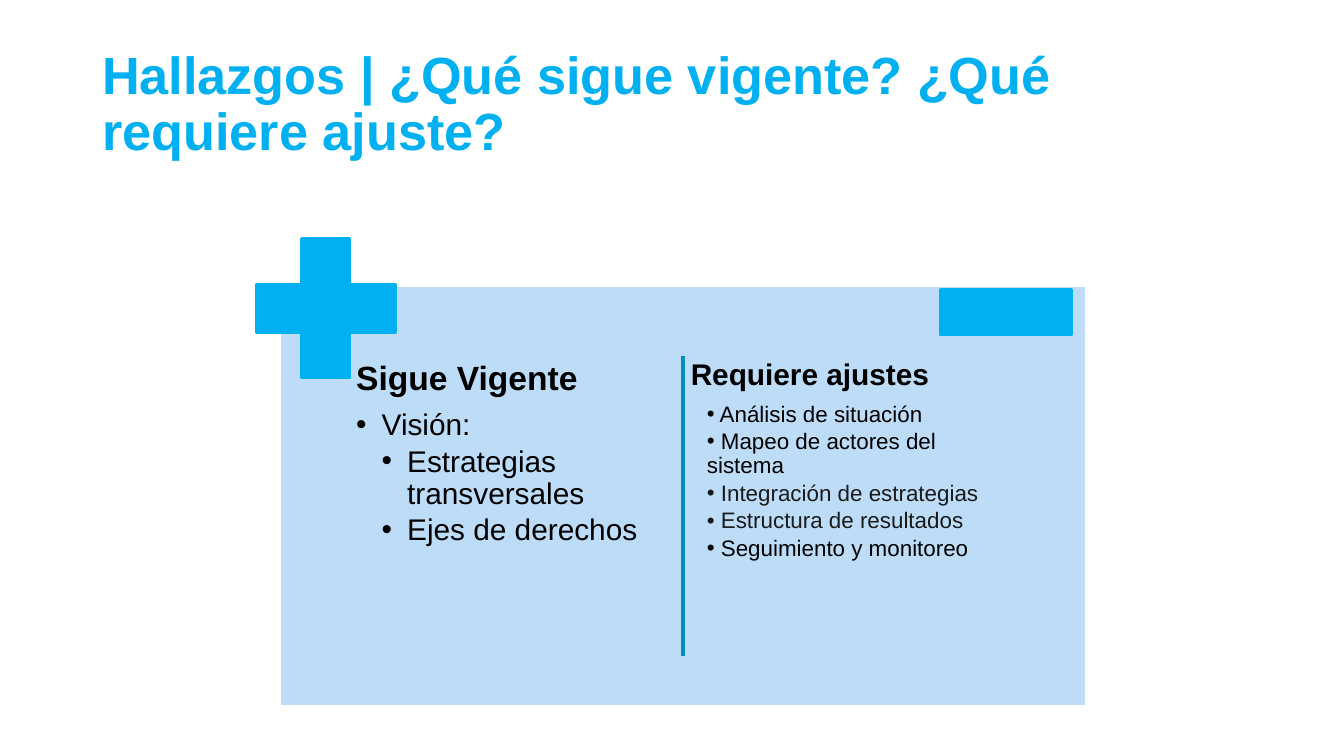
from lxml.etree import SubElement
from pptx import Presentation
from pptx.dml.color import RGBColor
from pptx.enum.shapes import MSO_CONNECTOR as Connector, MSO_SHAPE as Shape
from pptx.enum.text import MSO_ANCHOR as Anchor
from pptx.oxml.ns import qn
from pptx.util import Inches, Pt

WHITE = RGBColor(0xFF, 0xFF, 0xFF)
PALE_BLUE = RGBColor(0xBD, 0xDC, 0xF8)
CYAN = RGBColor(0x00, 0xB0, 0xF0)
DEEP_BLUE = RGBColor(0x00, 0x8D, 0xC0)
BLACK = RGBColor(0x00, 0x00, 0x00)
CHARCOAL = RGBColor(0x1A, 0x1A, 0x1A)

FONT = "Arial"
COLUMNS = 100
ROWS = COLUMNS * 9 / 16
PANEL = (20.8, 21.2, 60.1, 31.4)
BODY_TOP, BODY_WIDTH, BODY_HEIGHT = 26.5, 24.5, 23.3

KEPT = [("Visión:", 1), ("Estrategias transversales", 2), ("Ejes de derechos", 2)]
ADJUSTED = [
    (" Análisis de situación", BLACK),
    (" Mapeo de actores del sistema", BLACK),
    (" Integración de estrategias", CHARCOAL),
    (" Estructura de resultados", CHARCOAL),
    (" Seguimiento y monitoreo", BLACK),
]


def grid(*cells):
    return [Inches(cell / 10) for cell in cells]


def add_block(slide, kind, area, fill, border):
    block = slide.shapes.add_shape(kind, *grid(*area))
    block.shadow.inherit = False
    block.fill.solid()
    block.fill.fore_color.rgb = fill
    block.line.color.rgb = border
    block.line.width = Pt(2)
    return block


def add_divider(slide, x, top, bottom):
    divider = slide.shapes.add_connector(Connector.STRAIGHT, *grid(x, top, x, bottom))
    divider.line.color.rgb = DEEP_BLUE
    divider.line.width = Pt(2)
    SubElement(divider._element.spPr, qn("a:effectLst"))


def add_frame(slide, area, side_inset, end_inset, anchor=Anchor.TOP):
    frame = slide.shapes.add_textbox(*grid(*area)).text_frame
    frame.word_wrap = True
    frame.vertical_anchor = anchor
    frame.margin_left = frame.margin_right = Inches(side_inset)
    frame.margin_top = frame.margin_bottom = Inches(end_inset)
    return frame


def write(frame, text, size, color=BLACK, bold=False, after=0, level=0,
          bullet=False, indent=0, hanging=0):
    first = frame.paragraphs[0]
    paragraph = frame.add_paragraph() if first.runs else first
    paragraph.level = level
    paragraph.line_spacing = 0.9
    paragraph.space_after = Pt(size * after)
    if bullet:
        properties = paragraph._p.get_or_add_pPr()
        properties.set("marL", str(Inches(indent)))
        properties.set("indent", str(-Inches(hanging)))
        SubElement(properties, qn("a:buFont"), typeface=FONT)
        SubElement(properties, qn("a:buChar"), char="•")
    run = paragraph.add_run()
    run.text = text
    run.font.name = FONT
    run.font.size = Pt(size)
    run.font.bold = bold
    run.font.color.rgb = color


def add_body(slide, left, inset, heading, size):
    area = (left, BODY_TOP, BODY_WIDTH, BODY_HEIGHT)
    frame = add_frame(slide, area, inset, inset)
    write(frame, heading, size, bold=True, after=0.35)
    return frame


def main():
    deck = Presentation()
    deck.slide_width, deck.slide_height = grid(COLUMNS, ROWS)
    slide = deck.slides.add_slide(deck.slide_layouts[6])

    add_block(slide, Shape.RECTANGLE, PANEL, PALE_BLUE, WHITE)

    kept = add_body(slide, 26.1, 0.04, "Sigue Vigente", 18)
    for text, level in KEPT:
        write(kept, text, 16, after=0.15, level=level, bullet=True,
              indent=0.19 * level, hanging=0.19)

    adjusted = add_body(slide, 51.1, 0.03, "Requiere ajustes", 16)
    for text, color in ADJUSTED:
        write(adjusted, text, 12, color=color, after=0.15, level=1,
              bullet=True, indent=0.12)

    plus = add_block(slide, Shape.CROSS, (19.1, 17.8, 10.3, 10.3), CYAN, CYAN)
    plus.adjustments[0] = 0.33
    add_block(slide, Shape.RECTANGLE, (70, 21.6, 9.7, 3.3), CYAN, CYAN)
    add_divider(slide, PANEL[0] + PANEL[2] / 2, BODY_TOP, BODY_TOP + 22.3)

    title = add_frame(slide, (6.9, 2.4, 86.2, 10.9), 0.07, 0.04, Anchor.MIDDLE)
    write(title, "Hallazgos | ¿Qué sigue vigente? ¿Qué requiere ajuste?", 28,
          color=CYAN, bold=True)

    deck.save("out.pptx")


if __name__ == "__main__":
    main()
